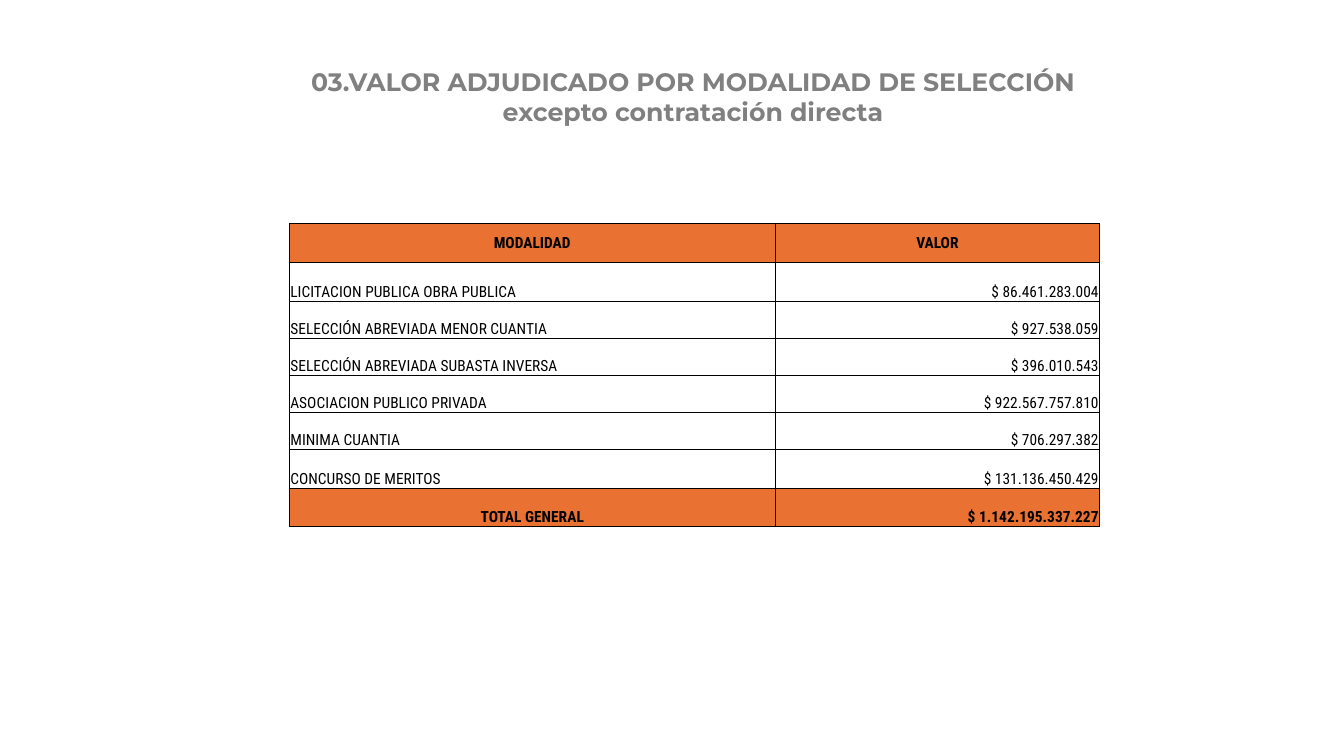
"""Builds the slide of awarded value by selection method."""
import dataclasses

import lxml.etree
import pptx
import pptx.dml.color
import pptx.enum.text
import pptx.oxml.ns
import pptx.util

ALIGN = pptx.enum.text.PP_ALIGN
ANCHOR = pptx.enum.text.MSO_ANCHOR
WIDTH, HEIGHT = pptx.util.Inches(13.33), pptx.util.Inches(7.5)
ORANGE, BLACK, GRAY = "E97132", "000000", "808080"
TITLE = ("03.VALOR ADJUDICADO POR MODALIDAD DE SELECCIÓN",
         "excepto contratación directa")


@dataclasses.dataclass(frozen=True)
class Row:
    """One table row; its height is a percentage of the slide's height."""
    label: str
    value: str
    height: float = 4.92
    strong: bool = False
    label_align: ALIGN = ALIGN.LEFT
    value_align: ALIGN = ALIGN.RIGHT
    anchor: ANCHOR = ANCHOR.BOTTOM


ROWS = (
    Row("MODALIDAD", "VALOR", 5.1, True, ALIGN.CENTER, ALIGN.CENTER, ANCHOR.MIDDLE),
    Row("LICITACION PUBLICA OBRA PUBLICA", "$ 86.461.283.004", 5.1),
    Row("SELECCIÓN ABREVIADA MENOR CUANTIA", "$ 927.538.059"),
    Row("SELECCIÓN ABREVIADA SUBASTA INVERSA", "$ 396.010.543"),
    Row("ASOCIACION PUBLICO PRIVADA", "$ 922.567.757.810"),
    Row("MINIMA CUANTIA", "$ 706.297.382"),
    Row("CONCURSO DE MERITOS", "$ 131.136.450.429", 5.1),
    Row("TOTAL GENERAL", "$ 1.142.195.337.227", 5.1, True, ALIGN.CENTER),
)


def across(percent: float) -> int:
    """Return a percentage of the slide's width."""
    return round(WIDTH * percent / 100)


def down(percent: float) -> int:
    """Return a percentage of the slide's height."""
    return round(HEIGHT * percent / 100)


def rgb(value: str) -> pptx.dml.color.RGBColor:
    """Turn a hex string into a colour."""
    return pptx.dml.color.RGBColor.from_string(value)


def add_run(p, text: str, font: str, size: float, color: str, bold: bool, align: ALIGN) -> None:
    """Add a formatted run to an aligned paragraph."""
    p.alignment = align
    r = p.add_run()
    r.text = text
    r.font.name = font
    r.font.size = pptx.util.Pt(size)
    r.font.bold = bold
    r.font.color.rgb = rgb(color)


def add_border(cell, side: str, width: float) -> None:
    """Draw one black side of a cell."""
    qn = pptx.oxml.ns.qn
    ln = lxml.etree.SubElement(cell._tc.get_or_add_tcPr(), qn(f"a:ln{side}"),
                               w=str(pptx.util.Pt(width)))
    fill = lxml.etree.SubElement(ln, qn("a:solidFill"))
    lxml.etree.SubElement(fill, qn("a:srgbClr"), val=BLACK)


def fill_title(sp) -> None:
    """Place the title and write its lines."""
    sp.left, sp.top = across(15.75), down(8.13)
    sp.width, sp.height = across(71.63), down(9.47)
    tf = sp.text_frame
    tf.word_wrap = True
    tf.auto_size = pptx.enum.text.MSO_AUTO_SIZE.SHAPE_TO_FIT_TEXT
    tf.vertical_anchor = ANCHOR.TOP
    for i, line in enumerate(TITLE):
        p = tf.add_paragraph() if i else tf.paragraphs[0]
        add_run(p, line, "Montserrat", 18, GRAY, True, ALIGN.CENTER)


def fill_cell(cell, row: Row, text: str, align: ALIGN, widths: dict[str, float]) -> None:
    """Format one cell and write its text."""
    for side, width in widths.items():
        add_border(cell, side, width)
    if row.strong:
        cell.fill.solid()
        cell.fill.fore_color.rgb = rgb(ORANGE)
    else:
        cell.fill.background()
    cell.margin_left = cell.margin_right = cell.margin_top = pptx.util.Inches(0.01)
    cell.margin_bottom = 0
    cell.vertical_anchor = row.anchor
    add_run(cell.text_frame.paragraphs[0], text, "Roboto Condensed", 11, BLACK,
            row.strong, align)


def add_values(s) -> None:
    """Add the table of awarded values."""
    table = s.shapes.add_table(len(ROWS), 2, across(21.53), down(29.6), across(60.3),
                               down(sum(row.height for row in ROWS))).table
    for column, share in zip(table.columns, (36.15, 24.15)):
        column.width = across(share)
    for i, row in enumerate(ROWS):
        table.rows[i].height = down(row.height)
        inner = 1 if row.strong else 0.5
        top = 1 if row.strong or ROWS[i - 1].strong else 0.5
        bottom = 1 if row.strong or ROWS[i + 1].strong else 0.5
        fill_cell(table.cell(i, 0), row, row.label, row.label_align,
                  {"L": 1, "R": inner, "T": top, "B": bottom})
        fill_cell(table.cell(i, 1), row, row.value, row.value_align,
                  {"L": inner, "R": 1, "T": top, "B": bottom})


def main() -> None:
    """Build and save the presentation."""
    prs = pptx.Presentation()
    prs.slide_width, prs.slide_height = WIDTH, HEIGHT
    s = prs.slides.add_slide(prs.slide_layouts[5])
    fill_title(s.shapes.title)
    add_values(s)
    prs.save("out.pptx")


if __name__ == "__main__":
    main()
